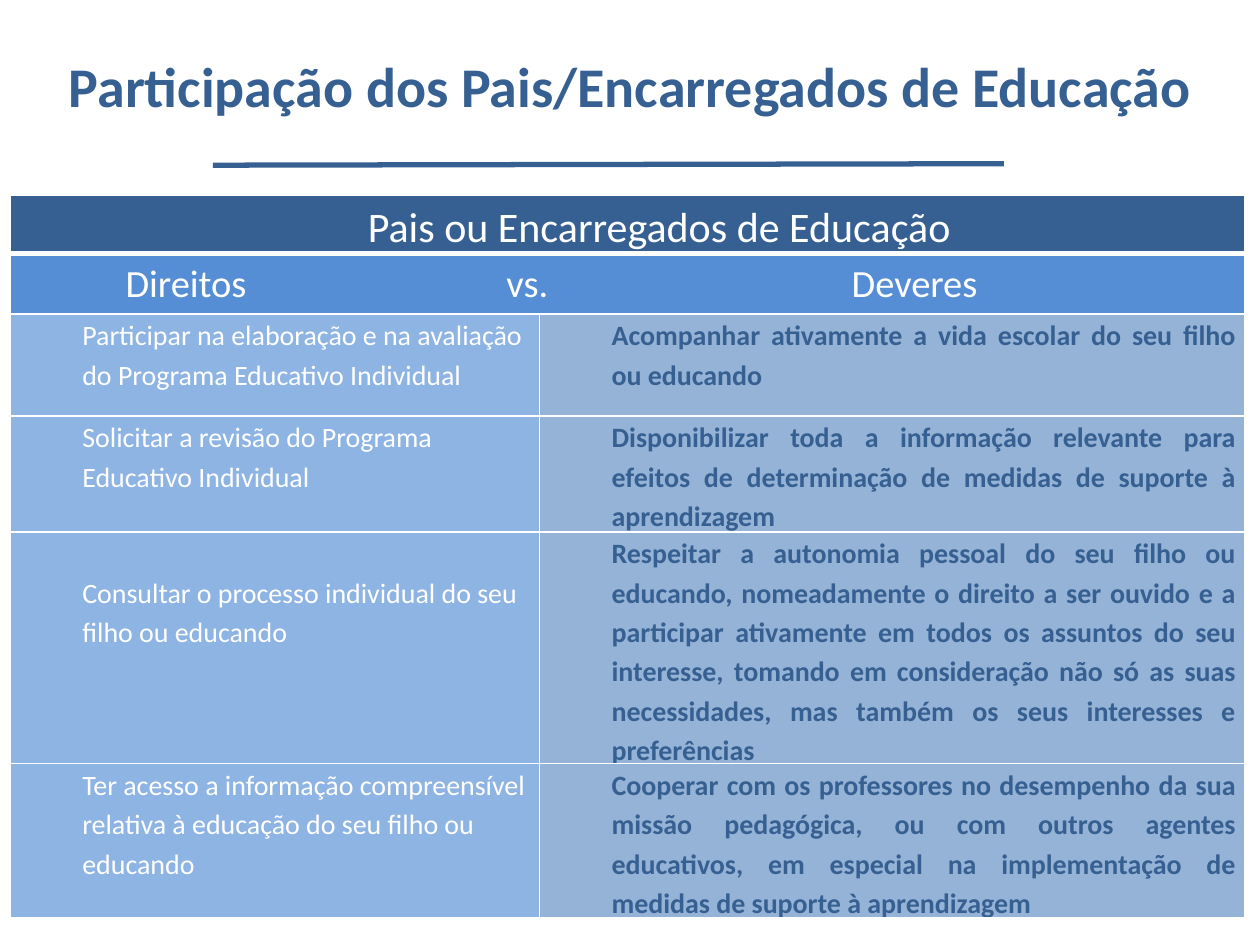
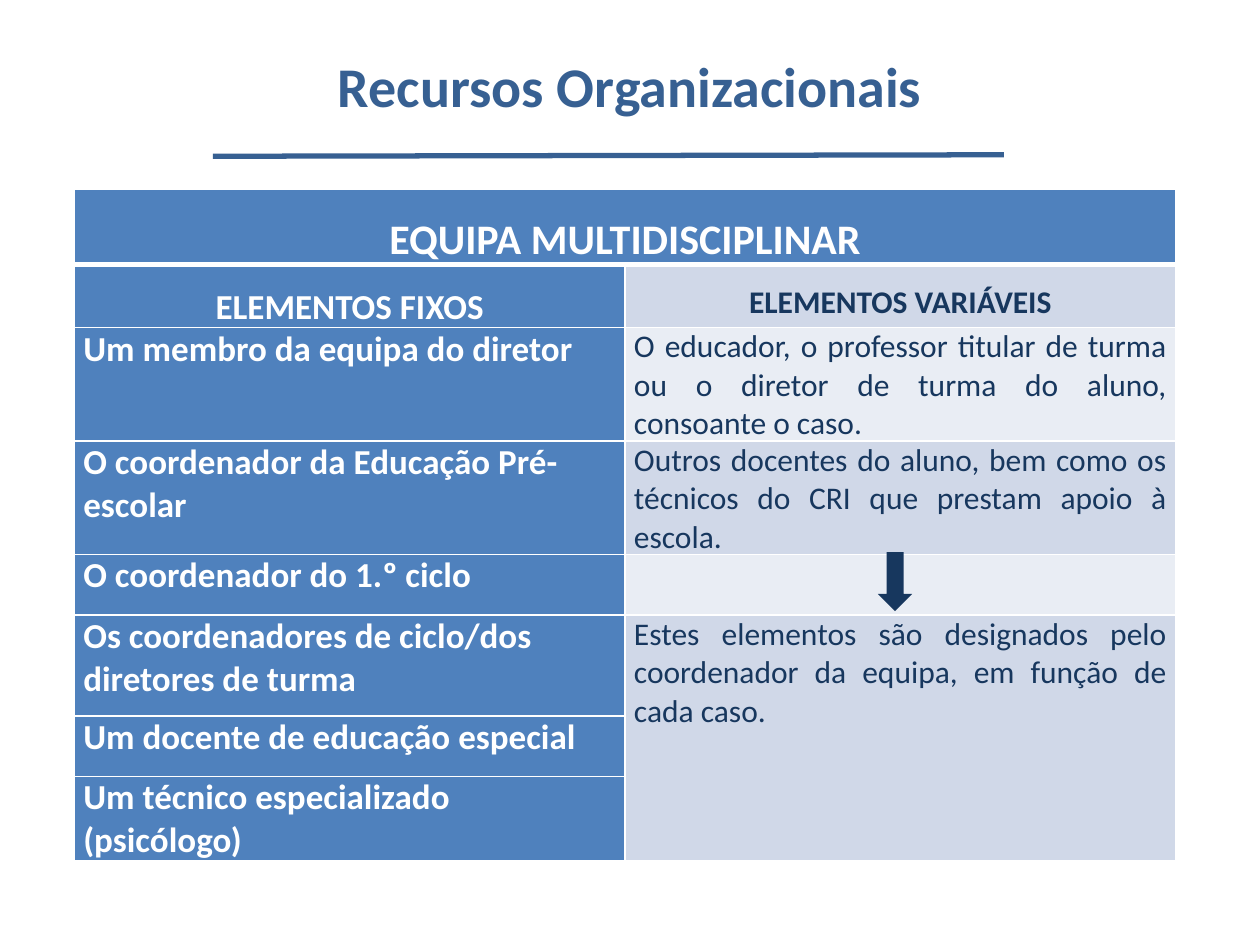
from pptx import Presentation
from pptx.dml.color import RGBColor
from pptx.enum.shapes import MSO_CONNECTOR as Link, MSO_SHAPE as Shape
from pptx.enum.text import MSO_ANCHOR as Anchor, PP_ALIGN as Align
from pptx.oxml.ns import qn
from pptx.util import Cm, Pt
from lxml.etree import SubElement as Sub, Element

FONT = "Calibri"
WHITE, BLUE, NAVY = "FFFFFF", "376092", "17375E"
SKY, PALE, STEEL = "558ED5", "8EB4E3", "95B3D7"
MID, BAND, LIGHT = "4F81BD", "D0D8E8", "E9EDF4"
PAD, INDENT = 0.18, 1.27

DUTIES = [
    ("Participar na elaboração e na avaliação do Programa Educativo Individual",
     "Acompanhar ativamente a vida escolar do seu filho ou educando"),
    ("Solicitar a revisão do Programa Educativo Individual",
     "Disponibilizar toda a informação relevante para efeitos de determinação "
     "de medidas de suporte à aprendizagem"),
    ("Consultar o processo individual do seu filho ou educando",
     "Respeitar a autonomia pessoal do seu filho ou educando, nomeadamente o "
     "direito a ser ouvido e a participar ativamente em todos os assuntos do "
     "seu interesse, tomando em consideração não só as suas necessidades, mas "
     "também os seus interesses e preferências"),
    ("Ter acesso a informação compreensível relativa à educação do seu filho "
     "ou educando",
     "Cooperar com os professores no desempenho da sua missão pedagógica, ou "
     "com outros agentes educativos, em especial na implementação de medidas "
     "de suporte à aprendizagem"),
]
FIXED = [
    "Um membro da equipa do diretor",
    "O coordenador da Educação Pré-escolar",
    "O coordenador do 1.º ciclo",
    "Os coordenadores de ciclo/dos diretores de turma",
    "Um docente de educação especial",
    "Um técnico especializado (psicólogo)",
]
VARIED = [
    (2, "O educador, o professor titular de turma ou o diretor de turma do "
        "aluno, consoante o caso."),
    (3, "Outros docentes do aluno, bem como os técnicos do CRI que prestam "
        "apoio à escola."),
    (5, "Estes elementos são designados pelo coordenador da equipa, em função "
        "de cada caso."),
]


def rgb(code):
    """Turn a hex string into a colour."""
    return RGBColor.from_string(code)


def paint(item, code):
    """Fill a shape or cell with one colour."""
    item.fill.solid()
    item.fill.fore_color.rgb = rgb(code)


def write(frame, text, size, color, bold=False, align=Align.LEFT,
          lead=None, indent=0):
    """Put one styled run in the first paragraph and return the paragraph."""
    para = frame.paragraphs[0]
    para.alignment = align
    para.line_spacing = lead
    if indent:
        props = para._p.get_or_add_pPr()
        props.set("marL", str(Cm(indent)))
        props.set("indent", "0")
    run = para.add_run()
    run.text = text
    font = run.font
    font.name, font.size, font.bold = FONT, Pt(size), bold
    font.color.rgb = rgb(color)
    return para


def set_tabs(para, stops):
    """Give a paragraph left tab stops."""
    tabs = Sub(para._p.get_or_add_pPr(), qn("a:tabLst"))
    for stop in stops:
        Sub(tabs, qn("a:tab"), pos=str(Cm(stop)), algn="l")


def edge(cell, top, base):
    """Draw white borders round a cell."""
    props = cell._tc.get_or_add_tcPr()
    sides = (("L", 1), ("R", 1), ("T", top), ("B", base))
    for place, (side, width) in enumerate(sides):
        line = Element(qn("a:ln" + side), w=str(Pt(width)))
        Sub(Sub(line, qn("a:solidFill")), qn("a:srgbClr"), val=WHITE)
        props.insert(place, line)


def add_title(slide, text, left, width):
    """Place the slide title, centred in its box."""
    box = slide.shapes.add_textbox(Cm(left), Cm(0.13), Cm(width), Cm(3.18))
    frame = box.text_frame
    frame.word_wrap = True
    frame.vertical_anchor = Anchor.MIDDLE
    write(frame, text, 32, BLUE, True, Align.CENTER)


def add_rule(slide, top):
    """Draw the slightly rising rule below the title."""
    rule = slide.shapes.add_connector(
        Link.STRAIGHT, Cm(4.29), Cm(top), Cm(20.24), Cm(top - 0.03))
    rule.line.color.rgb = rgb(BLUE)
    rule.line.width = Pt(3)
    Sub(rule._element.spPr, qn("a:effectLst"))


def add_grid(slide, left, top, cols, rows, fill, gap):
    """Add a bordered table, coloured by fill(row, col), and return it."""
    grid = slide.shapes.add_table(
        len(rows), len(cols), Cm(left), Cm(top),
        Cm(sum(cols)), Cm(sum(rows))).table
    grid.first_row = grid.horz_banding = False
    for col, width in zip(grid.columns, cols):
        col.width = Cm(width)
    for r, height in enumerate(rows):
        grid.rows[r].height = Cm(height)
        for c in range(len(cols)):
            cell = grid.cell(r, c)
            cell.margin_left = cell.margin_right = Cm(PAD)
            cell.margin_top = cell.margin_bottom = 0
            paint(cell, fill(r, c))
            edge(cell, gap if r == 1 else 1, 3 if r == 0 else 1)
    return grid


def duty_table(slide, left, top):
    """Build the table of rights and duties of parents."""
    def fill(r, c):
        """Pick the fill of a cell."""
        return (BLUE, SKY)[r] if r < 2 else (PALE, STEEL)[c]

    grid = add_grid(slide, left, top, [10.67, 14.22],
                    [1.17, 1.22, 2.06, 1.85, 3.86, 2.31], fill, 1)
    for r in range(2):
        grid.cell(r, 0).merge(grid.cell(r, 1))
    write(grid.cell(0, 0).text_frame, "Pais ou Encarregados de Educação", 24,
          WHITE, align=Align.CENTER, lead=1.15, indent=INDENT)
    head = grid.cell(1, 0)
    head.margin_left = Cm(2.32)
    para = write(head.text_frame, "Direitos\tvs.\tDeveres", 22, WHITE,
                 lead=1.15)
    set_tabs(para, [7.68, 14.64])
    for r, (right, duty) in enumerate(DUTIES, 2):
        write(grid.cell(r, 0).text_frame, right, 16, WHITE,
              lead=1.15, indent=INDENT)
        write(grid.cell(r, 1).text_frame, duty, 16, BLUE, True,
              Align.JUSTIFY, 1.15, INDENT)
    grid.cell(4, 0).margin_top = Cm(0.79)


def team_table(slide, left, top):
    """Build the table of team members with its arrow."""
    def fill(r, c):
        """Pick the fill of a cell."""
        if r == 0 or c == 0:
            return MID
        return LIGHT if r in (2, 4) else BAND

    grid = add_grid(slide, left, top, [11.1] * 2,
                    [1.14, 1.22, 2.16, 2.16, 1.22, 2.03, 1.22, 1.22], fill, 3)
    grid.cell(0, 0).merge(grid.cell(0, 1))
    grid.cell(5, 1).merge(grid.cell(7, 1))
    grid.cell(0, 0).vertical_anchor = Anchor.MIDDLE
    heads = [(0, 0, "EQUIPA MULTIDISCIPLINAR", 24, WHITE),
             (1, 0, "ELEMENTOS FIXOS", 20, WHITE),
             (1, 1, "ELEMENTOS VARIÁVEIS", 18, NAVY)]
    for r, c, text, size, color in heads:
        write(grid.cell(r, c).text_frame, text, size, color, True,
              Align.CENTER, 1.5)
    for r, text in enumerate(FIXED, 2):
        write(grid.cell(r, 0).text_frame, text, 20, WHITE, True)
    for r, text in VARIED:
        write(grid.cell(r, 1).text_frame, text, 18, NAVY,
              align=Align.JUSTIFY)
    arrow = slide.shapes.add_shape(
        Shape.DOWN_ARROW, Cm(left + 16.2), Cm(top + 7.32), Cm(0.69), Cm(1.19))
    arrow.shadow.inherit = False
    paint(arrow, NAVY)
    arrow.line.fill.background()


def main():
    """Build and save both slides."""
    deck = Presentation()
    deck.slide_width, deck.slide_height = Cm(25.4), Cm(19.05)
    blank = deck.slide_layouts[6]

    slide = deck.slides.add_slide(blank)
    add_title(slide, "Participação dos Pais/Encarregados de Educação", 0.71, 24)
    duty_table(slide, 0.21, 3.94)
    add_rule(slide, 3.33)

    slide = deck.slides.add_slide(blank)
    add_title(slide, "Recursos Organizacionais", 1.27, 22.86)
    team_table(slide, 1.5, 3.81)
    add_rule(slide, 3.15)

    deck.save("out.pptx")


if __name__ == "__main__":
    main()
